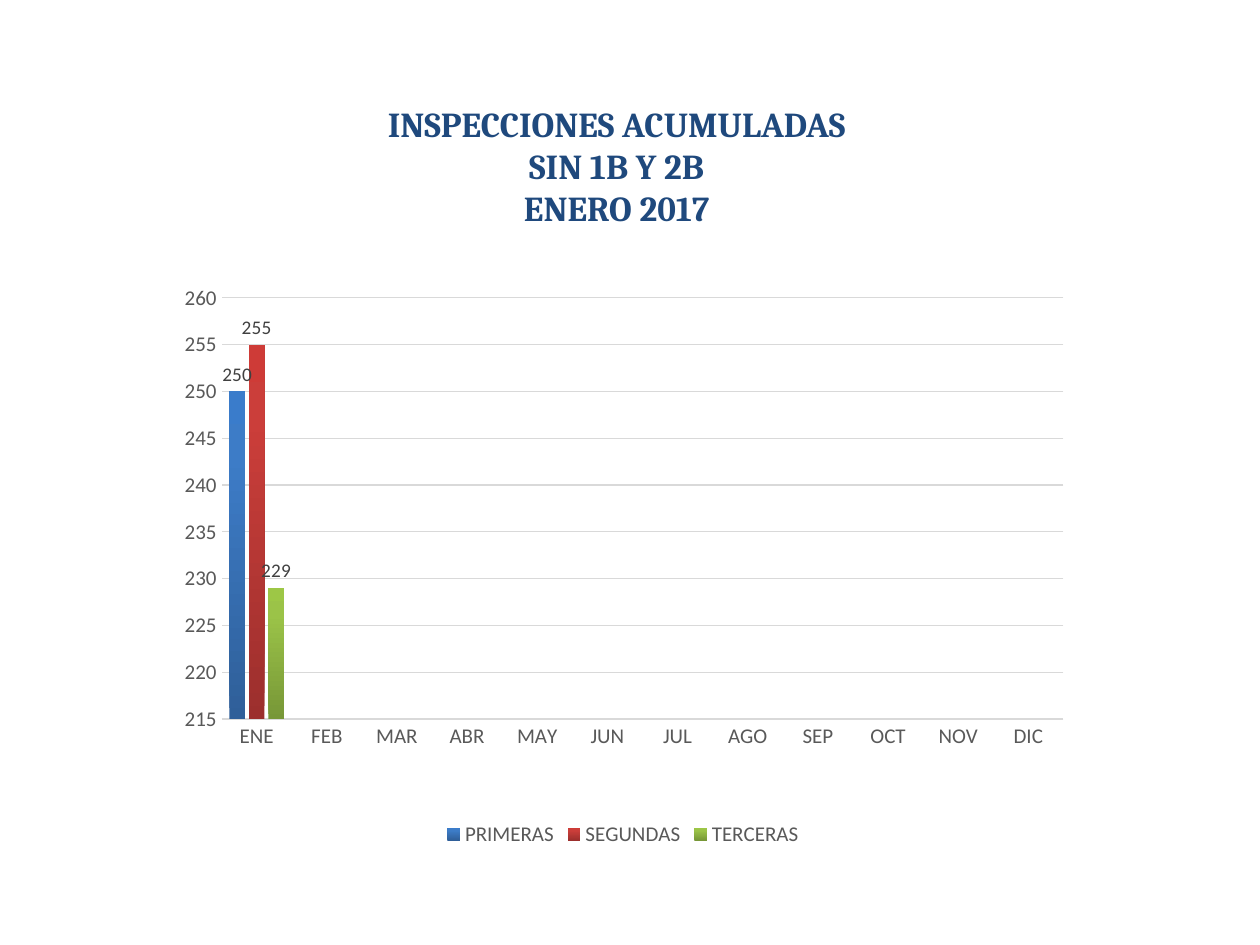
import copy

import pptx
import pptx.chart.data
import pptx.dml.color
import pptx.enum.chart
import pptx.enum.text
import pptx.oxml
import pptx.oxml.ns
import pptx.util

Pt = pptx.util.Pt
RGBColor = pptx.dml.color.RGBColor
qn = pptx.oxml.ns.qn

NAVY = RGBColor(0x1F, 0x49, 0x7D)
BLACK = RGBColor(0x00, 0x00, 0x00)
DARK_GREY = RGBColor(0x40, 0x40, 0x40)
GREY = RGBColor(0x59, 0x59, 0x59)
LIGHT_GREY = RGBColor(0xD9, 0xD9, 0xD9)
BLUES = (RGBColor(0x2F, 0x5F, 0x99), RGBColor(0x3D, 0x7C, 0xC7), RGBColor(0x3A, 0x7C, 0xCB))
REDS = (RGBColor(0x9C, 0x2F, 0x2D), RGBColor(0xCB, 0x3E, 0x3A), RGBColor(0xCE, 0x3B, 0x37))
GREENS = (RGBColor(0x77, 0x97, 0x37), RGBColor(0x9B, 0xC3, 0x48), RGBColor(0x9D, 0xC7, 0x46))

TITLE_LINES = ("INSPECCIONES ACUMULADAS", "SIN 1B Y 2B", "ENERO 2017")
MONTHS = ("ENE", "FEB", "MAR", "ABR", "MAY", "JUN", "JUL", "AGO", "SEP", "OCT", "NOV", "DIC")
INSPECTIONS = (("PRIMERAS", 250, BLUES), ("SEGUNDAS", 255, REDS), ("TERCERAS", 229, GREENS))
STOP_POSITIONS = (0, 0.8, 1)
PLOT_LAYOUT = {"x": 0.09, "y": 0.04, "w": 0.86, "h": 0.73}


def set_font(font, name, size, color, bold=False):
    """Set the typeface, size, colour and weight of a font."""
    font.name = name
    font.size = Pt(size)
    font.color.rgb = color
    font.bold = bold


def fill_title(title):
    """Place the title and write its centred lines."""
    title.left, title.top, title.width, title.height = Pt(121.7), Pt(54.7), Pt(461.5), Pt(80)
    frame = title.text_frame
    frame.word_wrap = True
    frame.auto_size = pptx.enum.text.MSO_AUTO_SIZE.SHAPE_TO_FIT_TEXT
    frame.vertical_anchor = pptx.enum.text.MSO_ANCHOR.TOP
    for index, line in enumerate(TITLE_LINES):
        para = frame.add_paragraph() if index else frame.paragraphs[0]
        para.alignment = pptx.enum.text.PP_ALIGN.CENTER
        span = para.add_run()
        span.text = line
        set_font(span.font, "Cambria", 20, NAVY, bold=True)


def fill_gradient(fill, colors):
    """Fill with a gradient that rises from the first colour to the last."""
    fill.gradient()
    fill.gradient_angle = 90
    stop_list = fill._xPr.find(".//" + qn("a:gsLst"))
    stop_list.append(copy.deepcopy(stop_list[-1]))
    for stop, color, position in zip(fill.gradient_stops, colors, STOP_POSITIONS):
        stop.color.rgb = color
        stop.position = position


def place_plot(chart):
    """Fix the inner plot area as fractions of the chart."""
    area = chart._chartSpace.find(".//" + qn("c:plotArea"))
    for layout in area.findall(qn("c:layout")):
        area.remove(layout)
    settings = [("layoutTarget", "inner"), ("xMode", "edge"), ("yMode", "edge"), *PLOT_LAYOUT.items()]
    items = "".join(f'<c:{tag} val="{value}"/>' for tag, value in settings)
    area.insert(0, pptx.oxml.parse_xml(
        f'<c:layout {pptx.oxml.ns.nsdecls("c")}><c:manualLayout>{items}</c:manualLayout></c:layout>'))


def format_axes(chart):
    """Format the month axis, the value axis and its gridlines."""
    months, values = chart.category_axis, chart.value_axis
    for axis in (months, values):
        axis.major_tick_mark = axis.minor_tick_mark = pptx.enum.chart.XL_TICK_MARK.NONE
        set_font(axis.tick_labels.font, "Calibri", 12, GREY)
    months.format.line.color.rgb = LIGHT_GREY
    months.format.line.width = Pt(1)
    values.format.line.fill.background()
    values.minimum_scale, values.maximum_scale, values.major_unit = 215, 260, 5
    grid = values.major_gridlines.format.line
    grid.color.rgb = LIGHT_GREY
    grid.width = Pt(0.75)


def format_series(series, colors):
    """Colour one series and label its values."""
    fill_gradient(series.format.fill, colors)
    labels = series.data_labels
    labels.show_value = True
    labels.position = pptx.enum.chart.XL_LABEL_POSITION.OUTSIDE_END
    set_font(labels.font, "Calibri", 11, DARK_GREY)


def add_inspection_chart(page):
    """Add the column chart of inspections by month."""
    data = pptx.chart.data.CategoryChartData(number_format="General")
    data.categories = MONTHS
    for name, january, _ in INSPECTIONS:
        data.add_series(name, [january] + [None] * (len(MONTHS) - 1))
    chart = page.shapes.add_chart(
        pptx.enum.chart.XL_CHART_TYPE.COLUMN_CLUSTERED,
        Pt(76.3), Pt(157), Pt(559.4), Pt(329.8), data).chart
    set_font(chart.font, "Calibri", 10, BLACK)
    chart.has_title = False
    chart.has_legend = True
    chart.legend.position = pptx.enum.chart.XL_LEGEND_POSITION.BOTTOM
    chart.legend.include_in_layout = False
    set_font(chart.legend.font, "Calibri", 12, GREY)
    plot = chart.plots[0]
    plot.vary_by_categories = False
    plot.gap_width, plot.overlap = 100, -24
    for series, (_, _, colors) in zip(plot.series, INSPECTIONS):
        format_series(series, colors)
    format_axes(chart)
    place_plot(chart)


def main():
    """Build and save the slide."""
    deck = pptx.Presentation()
    deck.slide_width, deck.slide_height = Pt(720), Pt(540)
    page = deck.slides.add_slide(deck.slide_layouts.get_by_name("Title Only"))
    fill_title(page.shapes.title)
    add_inspection_chart(page)
    deck.save("out.pptx")


if __name__ == "__main__":
    main()
